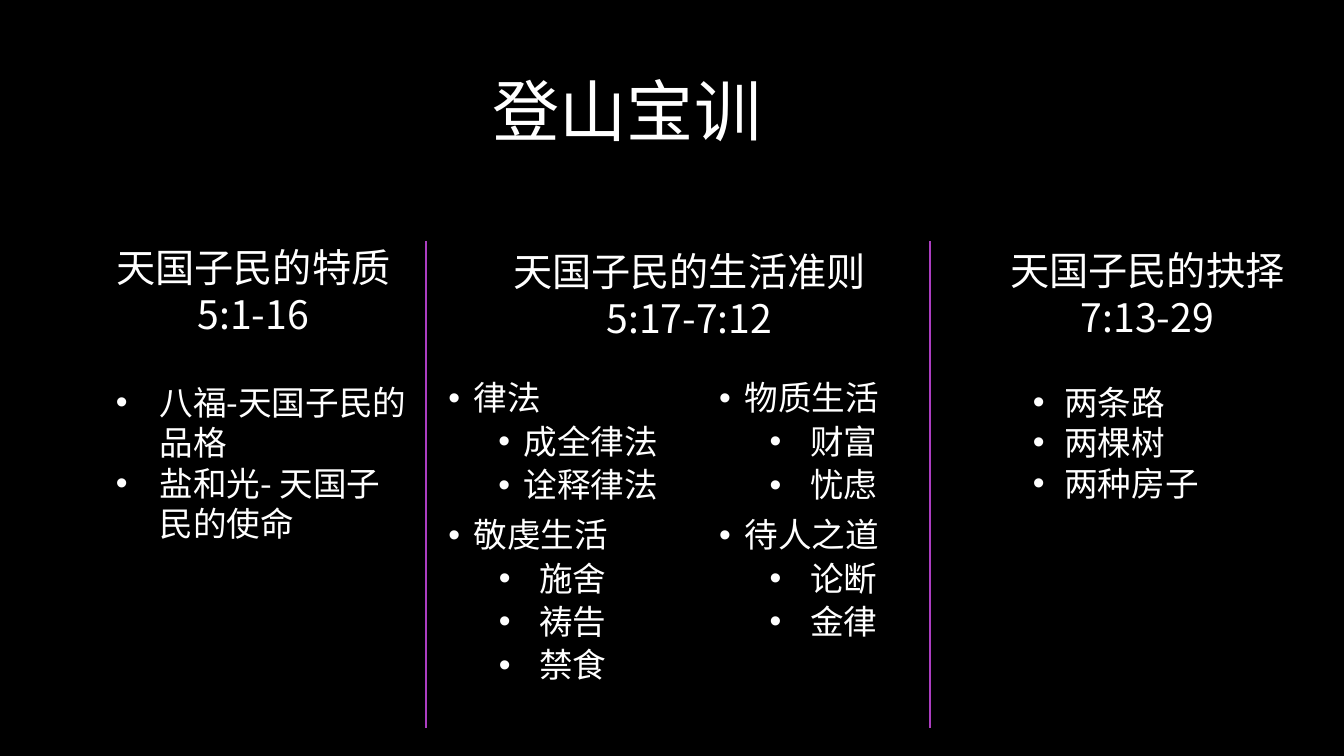
from lxml import etree
from pptx import Presentation
from pptx.dml.color import RGBColor
from pptx.enum.shapes import MSO_CONNECTOR
from pptx.enum.text import MSO_ANCHOR, PP_ALIGN
from pptx.oxml.ns import qn
from pptx.util import Cm, Pt

BLACK = RGBColor(0x00, 0x00, 0x00)
WHITE = RGBColor(0xFF, 0xFF, 0xFF)
PURPLE = RGBColor(0xAC, 0x3E, 0xC1)
FONT = "Noto Sans CJK SC"
CENTER = PP_ALIGN.CENTER
TOP, MIDDLE = MSO_ANCHOR.TOP, MSO_ANCHOR.MIDDLE
STRAIGHT = MSO_CONNECTOR.STRAIGHT

LIST_TOP = 9.5
DIVIDER_TOP, DIVIDER_BOTTOM = 6.07, 18.34

# Bullet styles: level, text indent (cm), hanging indent (cm), space before (pt)
TOPIC = (0, 0.64, 0.64, 10)
SUBTOPIC = (1, 1.9, 0.64, 5)
DEEP_SUBTOPIC = (1, 2.29, 1.02, 5)
TRAIT = (1, 2.7, 1.1, 0)
CHOICE = (1, 2.06, 0.79, 0)

TRAITS = [("八福-天国子民的品格", TRAIT), ("盐和光- 天国子民的使命", TRAIT)]
CHOICES = [(choice, CHOICE) for choice in ("两条路", "两棵树", "两种房子")]
RULES = [
    ("律法", TOPIC),
    ("成全律法", SUBTOPIC),
    ("诠释律法", SUBTOPIC),
    ("敬虔生活", TOPIC),
    ("施舍", DEEP_SUBTOPIC),
    ("祷告", DEEP_SUBTOPIC),
    ("禁食", DEEP_SUBTOPIC),
    ("物质生活", TOPIC),
    ("财富", DEEP_SUBTOPIC),
    ("忧虑", DEEP_SUBTOPIC),
    ("待人之道", TOPIC),
    ("论断", DEEP_SUBTOPIC),
    ("金律", DEEP_SUBTOPIC),
]


def format_runs(paragraph, size):
    for run in paragraph.runs:
        run.font.size = Pt(size)
        run.font.name = FONT
        run.font.color.rgb = WHITE
        east_asian = etree.SubElement(run.font._element, qn("a:ea"))
        east_asian.set("typeface", FONT)


def add_title(slide, left, top, width, height):
    title = slide.shapes.title
    title.left, title.top = Cm(left), Cm(top)
    title.width, title.height = Cm(width), Cm(height)
    title.text_frame.text = "登山宝训"
    title.text_frame.vertical_anchor = MIDDLE
    heading = title.text_frame.paragraphs[0]
    heading.alignment = CENTER
    format_runs(heading, 48)


def add_frame(slide, box, anchor=TOP):
    frame = slide.shapes.add_textbox(*map(Cm, box)).text_frame
    frame.word_wrap = True
    frame.vertical_anchor = anchor
    return frame


def add_heading(slide, box, theme, verses, anchor=TOP):
    frame = add_frame(slide, box, anchor)
    frame.text = f"{theme}\n{verses}"
    for line in frame.paragraphs:
        line.alignment = CENTER
        format_runs(line, 28)


def add_bullets(slide, box, points, columns=1, line_spacing=1.0):
    frame = add_frame(slide, box)
    frame._txBody.bodyPr.set("numCol", str(columns))
    frame.text = "\n".join(text for text, _ in points)
    for index, (paragraph, (_, style)) in enumerate(zip(frame.paragraphs, points)):
        level, indent, hanging, space_before = style
        paragraph.level = level
        paragraph.line_spacing = line_spacing
        paragraph.space_before = Pt(space_before if index else 0)
        properties = paragraph._p.get_or_add_pPr()
        properties.set("marL", str(Cm(indent)))
        properties.set("indent", str(-Cm(hanging)))
        etree.SubElement(properties, qn("a:buFont")).set("typeface", "Arial")
        etree.SubElement(properties, qn("a:buChar")).set("char", "•")
        format_runs(paragraph, 24)


def add_divider(slide, x):
    divider = slide.shapes.add_connector(
        STRAIGHT, Cm(x), Cm(DIVIDER_BOTTOM), Cm(x), Cm(DIVIDER_TOP))
    divider.line.color.rgb = PURPLE
    divider.line.width = Pt(1.5)
    etree.SubElement(divider._element.spPr, qn("a:effectLst"))


def main():
    deck = Presentation()
    deck.slide_width, deck.slide_height = Cm(33.87), Cm(19.05)
    slide = deck.slides.add_slide(deck.slide_layouts[5])
    slide.background.fill.solid()
    slide.background.fill.fore_color.rgb = BLACK

    add_title(slide, 1.73, 0.74, 28.14, 4.04)
    add_heading(slide, (2.03, 5.89, 8.71, 2.87), "天国子民的特质", "5:1-16", MIDDLE)
    add_heading(slide, (12.22, 6.1, 10.31, 2.64), "天国子民的生活准则", "5:17-7:12")
    add_heading(slide, (24.56, 6.07, 8.71, 2.92), "天国子民的抉择", "7:13-29")
    add_bullets(slide, (1.07, LIST_TOP, 9.53, 4.37), TRAITS)
    add_bullets(slide, (11.05, LIST_TOP, 14.15, 8.84), RULES, columns=2, line_spacing=0.9)
    add_bullets(slide, (24.51, LIST_TOP, 8.74, 3.33), CHOICES)
    for x in (10.74, 23.44):
        add_divider(slide, x)
    deck.save("out.pptx")


if __name__ == "__main__":
    main()
